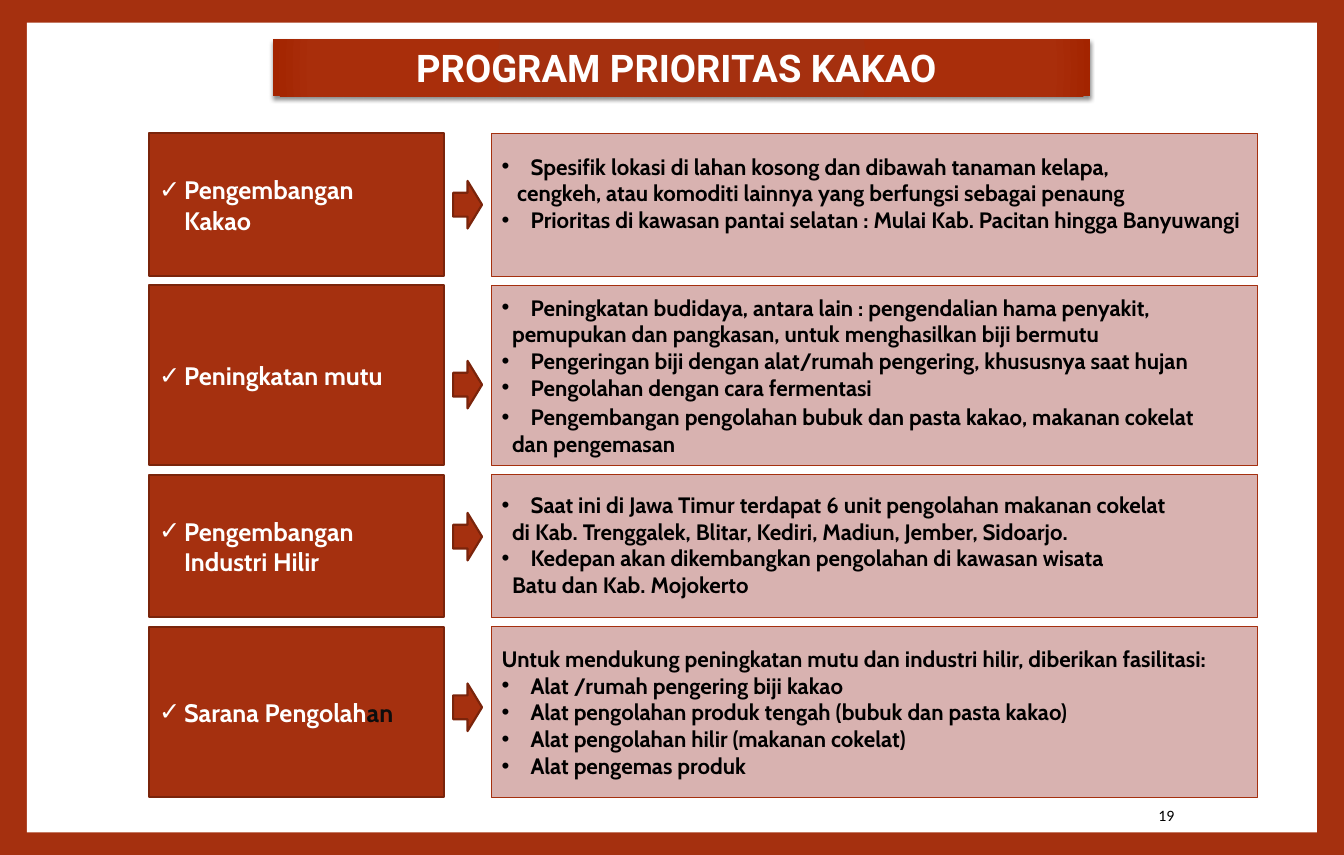
from lxml import etree
from pptx import Presentation
from pptx import util as u
from pptx.dml.color import RGBColor
from pptx.enum import shapes, text
from pptx.oxml.ns import nsdecls, qn

RUST, DARK_RUST, PINK = "A5300F", "7A240B", "D8B2B0"
WHITE, BLACK = "FFFFFF", "000000"
FIRST_TOP, GAP = 1.29, 0.09
LABEL_INDENT, ITEM_INDENT = 0.24, 0.28


def paint(shape, fill, line=None, width=0):
    shape.fill.solid()
    shape.fill.fore_color.rgb = RGBColor.from_string(fill)
    shape.shadow.inherit = False
    if line:
        shape.line.color.rgb = RGBColor.from_string(line)
        shape.line.width = u.Pt(width)
    else:
        shape.line.fill.background()


def write(frame, lines, size, color, font="Cabin", bold=True, align=text.PP_ALIGN.LEFT):
    """Fill a frame with (bullet, indent in inches, words) lines."""
    frame.word_wrap = True
    frame.auto_size = text.MSO_AUTO_SIZE.NONE
    frame.vertical_anchor = text.MSO_ANCHOR.MIDDLE
    frame.text = "\n".join(words for _, _, words in lines)
    for paragraph, (bullet, indent, _) in zip(frame.paragraphs, lines):
        paragraph.alignment = align
        paragraph.space_before = u.Pt(0)
        properties = paragraph._p.get_or_add_pPr()
        properties.set("marL", str(u.Inches(indent)))
        properties.set("indent", str(-u.Inches(indent) if bullet else 0))
        if bullet:
            etree.SubElement(properties, qn("a:buFont")).set("typeface", "Arial")
            etree.SubElement(properties, qn("a:buChar")).set("char", bullet)
        else:
            etree.SubElement(properties, qn("a:buNone"))
        for run in paragraph.runs:
            run.font.name, run.font.size, run.font.bold = font, u.Pt(size), bold
            run.font.color.rgb = RGBColor.from_string(color)


# Each program: height, arrow top, label lines, detail lines
programs = [
    (1.38, 1.75,
     [("✓", LABEL_INDENT, "Pengembangan"), ("", LABEL_INDENT, "Kakao")],
     [("•", ITEM_INDENT, "Spesifik lokasi di lahan kosong dan dibawah tanaman kelapa,"),
      ("", 0.15, "cengkeh, atau komoditi lainnya yang berfungsi sebagai penaung"),
      ("•", ITEM_INDENT, "Prioritas di kawasan pantai selatan : Mulai Kab. Pacitan hingga Banyuwangi")]),
    (1.74, 3.49,
     [("✓", LABEL_INDENT, "Peningkatan mutu")],
     [("•", ITEM_INDENT, "Peningkatan budidaya, antara lain : pengendalian hama penyakit,"),
      ("", 0.1, "pemupukan dan pangkasan, untuk menghasilkan biji bermutu"),
      ("•", ITEM_INDENT, "Pengeringan biji dengan alat/rumah pengering, khususnya saat hujan"),
      ("•", ITEM_INDENT, "Pengolahan dengan cara fermentasi"),
      ("•", ITEM_INDENT, "Pengembangan pengolahan bubuk dan pasta kakao, makanan cokelat"),
      ("", 0.1, "dan pengemasan")]),
    (1.38, 4.96,
     [("✓", LABEL_INDENT, "Pengembangan"), ("", LABEL_INDENT, "Industri Hilir")],
     [("•", ITEM_INDENT, "Saat ini di Jawa Timur terdapat 6 unit pengolahan makanan cokelat"),
      ("", 0.1, "di Kab. Trenggalek, Blitar, Kediri, Madiun, Jember, Sidoarjo."),
      ("•", ITEM_INDENT, "Kedepan akan dikembangkan pengolahan di kawasan wisata"),
      ("", 0.1, "Batu dan Kab. Mojokerto")]),
    (1.65, 6.61,
     [("✓", LABEL_INDENT, "Sarana Pengolah")],
     [("", 0, "Untuk mendukung peningkatan mutu dan industri hilir, diberikan fasilitasi:"),
      ("•", ITEM_INDENT, "Alat /rumah pengering biji kakao"),
      ("•", ITEM_INDENT, "Alat pengolahan produk tengah (bubuk dan pasta kakao)"),
      ("•", ITEM_INDENT, "Alat pengolahan hilir (makanan cokelat)"),
      ("•", ITEM_INDENT, "Alat pengemas produk")]),
]

deck = Presentation()
deck.slide_width, deck.slide_height = u.Cm(33), u.Cm(21)
slide = deck.slides.add_slide(deck.slide_layouts.get_by_name("Comparison"))
slide.background.fill.solid()
slide.background.fill.fore_color.rgb = RGBColor.from_string(RUST)
title, *details = slide.placeholders

# White page inside the rust border, behind everything else
page = slide.shapes.add_shape(shapes.MSO_SHAPE.RECTANGLE, u.Inches(0.26), u.Inches(0.22),
                              u.Inches(12.47), u.Inches(7.83))
paint(page, WHITE)
title._element.addprevious(page._element)

# Title banner with a radial gradient and a soft shadow
title.left, title.top = u.Inches(2.64), u.Inches(0.38)
title.width, title.height = u.Inches(7.9), u.Inches(0.55)
write(title.text_frame, [("", 0, "PROGRAM PRIORITAS KAKAO")], 26.5, WHITE, "Roboto",
      align=text.PP_ALIGN.CENTER)
title.text_frame.margin_right = u.Inches(0.2)
stops = "".join(f'<a:gs pos="{place}000"><a:srgbClr val="{color}"/></a:gs>'
                for place, color in [(0, RUST), (90, "A92E0B"), (100, "A32400")])
banner = title._element.spPr
banner.append(etree.fromstring(
    f'<a:gradFill {nsdecls("a")}><a:gsLst>{stops}</a:gsLst><a:path path="circle">'
    '<a:fillToRect l="100000" t="100000" r="100000" b="100000"/></a:path></a:gradFill>'))
banner.append(etree.fromstring(
    f'<a:effectLst {nsdecls("a")}><a:outerShdw blurRad="{u.Pt(3)}" dist="{u.Pt(2)}" dir="5400000">'
    f'<a:srgbClr val="{BLACK}"><a:alpha val="45000"/></a:srgbClr></a:outerShdw></a:effectLst>'))

top = FIRST_TOP
for detail, (height, arrow_top, label_lines, detail_lines) in zip(details, programs):
    label = slide.shapes.add_shape(shapes.MSO_SHAPE.RECTANGLE, u.Inches(1.44), u.Inches(top),
                                   u.Inches(2.85), u.Inches(height))
    paint(label, RUST, DARK_RUST, 1.5)
    write(label.text_frame, label_lines, 17.6, WHITE)

    arrow = slide.shapes.add_shape(shapes.MSO_SHAPE.RIGHT_ARROW, u.Inches(4.38),
                                   u.Inches(arrow_top), u.Inches(0.28), u.Inches(0.46))
    paint(arrow, RUST, DARK_RUST, 1.5)

    detail.left, detail.top = u.Inches(4.75), u.Inches(top)
    detail.width, detail.height = u.Inches(7.41), u.Inches(height)
    paint(detail, PINK, RUST, 0.79)
    write(detail.text_frame, detail_lines, 15.5, BLACK)
    top += height + GAP

# Two lists sit a little high; one item of the second list stands apart
details[0].text_frame.margin_bottom = u.Inches(0.28)
details[2].text_frame.margin_bottom = u.Inches(0.08)
details[1].text_frame.paragraphs[4].space_before = u.Pt(2)

# The last label ends in dark letters
ending = label.text_frame.paragraphs[0].add_run()
ending.text = "an"
ending.font.name, ending.font.size, ending.font.bold = "Cabin", u.Pt(17.6), True
ending.font.color.rgb = RGBColor.from_string("0D0D0D")

page_number = slide.shapes.add_textbox(u.Inches(9.53), u.Inches(7.66),
                                       u.Inches(3.49), u.Inches(0.44))
write(page_number.text_frame, [("", 0, "19")], 11, BLACK, "Calibri", False,
      text.PP_ALIGN.CENTER)

deck.save("out.pptx")
